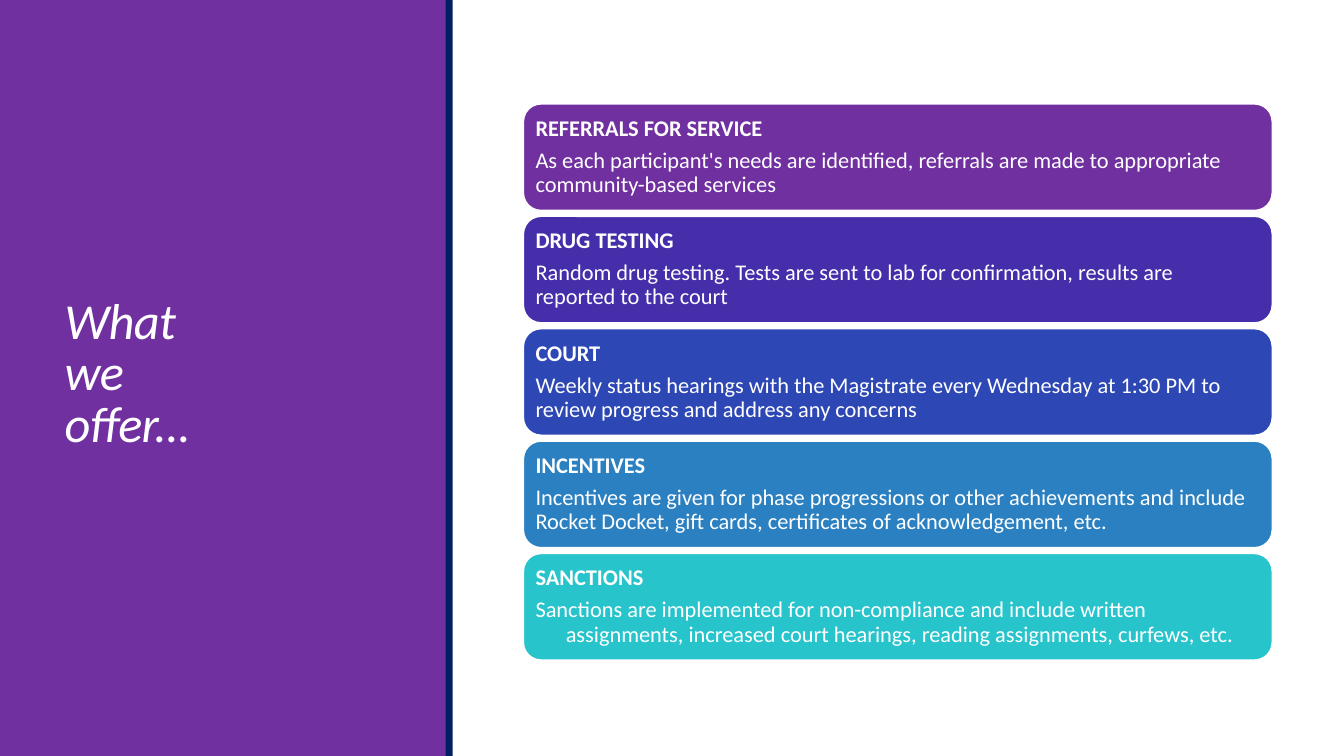
"""Build the "What we offer" slide: a purple title panel beside five service cards."""
from dataclasses import dataclass

from lxml import etree
from pptx import Presentation
from pptx import util as u
from pptx.dml.color import RGBColor
from pptx.enum import shapes, text
from pptx.oxml.ns import qn

SCALE = 9144
FONT = "Calibri"
WHITE, PURPLE, NAVY = "FFFFFF", "7030A0", "002060"
CARD_LEFT, CARD_TOP, CARD_WIDTH, CARD_HEIGHT = 519, 103, 743, 106
LAST_CARD_TOP = 549
CARD_INSET = 7
HANGING_INDENT = 30


@dataclass(frozen=True)
class Service:
    """One service on offer, with its card colour."""
    heading: str
    description: str
    color: str
    hanging: int = 0


SERVICES = [
    Service("REFERRALS FOR SERVICE",
            "As each participant's needs are identified, referrals are made to "
            "appropriate community-based services", PURPLE),
    Service("DRUG TESTING",
            "Random drug testing. Tests are sent to lab for confirmation, results are\v"
            "reported to the court", "462EAB"),
    Service("COURT",
            "Weekly status hearings with the Magistrate every Wednesday at 1:30 PM to "
            "review progress and address any concerns", "2D47B5"),
    Service("INCENTIVES",
            "Incentives are given for phase progressions or other achievements and include "
            "Rocket Docket, gift cards, certificates of acknowledgement, etc.", "2A80C1"),
    Service("SANCTIONS",
            "Sanctions are implemented for non-compliance and include written\v"
            "assignments, increased court hearings, reading assignments, curfews, etc.",
            "28C4CC", HANGING_INDENT),
]


def px(length: float) -> u.Emu:
    """Turn px into EMU."""
    return u.Emu(round(length * SCALE))


def rgb(color: str) -> RGBColor:
    """Turn a hex string into a colour."""
    return RGBColor.from_string(color)


def apply(target, formats: dict) -> None:
    """Set each attribute named in a dict of format values."""
    for name, value in formats.items():
        setattr(target, name, value)


def write(paragraph, words: str, size: int, spacing: float, **font) -> None:
    """Fill a paragraph with white, left-aligned text, sizing its line breaks alike."""
    paragraph.text = words
    apply(paragraph, {"alignment": text.PP_ALIGN.LEFT, "line_spacing": spacing})
    for run in paragraph.runs:
        apply(run.font, {"name": FONT, "size": u.Pt(size), **font})
        run.font.color.rgb = rgb(WHITE)
    for line_break in paragraph._p.findall(qn("a:br")):
        etree.SubElement(line_break, qn("a:rPr"), sz=str(size * 100))


def add_block(slide, kind, left: int, top: float, width: int, height: int, color: str):
    """Add a flat filled shape without an outline."""
    block = slide.shapes.add_shape(kind, px(left), px(top), px(width), px(height))
    block.shadow.inherit = False
    block.fill.solid()
    block.fill.fore_color.rgb = rgb(color)
    block.line.fill.background()
    return block


def add_card(slide, service: Service, top: float) -> None:
    """Add a rounded card with a bold heading over its description."""
    card = add_block(slide, shapes.MSO_SHAPE.ROUNDED_RECTANGLE,
                     CARD_LEFT, top, CARD_WIDTH, CARD_HEIGHT, service.color)
    card.line.color.rgb = rgb(WHITE)
    card.line.width = u.Pt(1.25)
    frame = card.text_frame
    sides = ("left", "top", "right", "bottom")
    apply(frame, {f"margin_{side}": px(CARD_INSET) for side in sides})
    apply(frame, {"word_wrap": True, "vertical_anchor": text.MSO_ANCHOR.MIDDLE})
    heading, description = frame.paragraphs[0], frame.add_paragraph()
    write(heading, service.heading, 16, 0.9, bold=True)
    heading.space_after = u.Pt(5.6)
    write(description, service.description, 16, 0.9, bold=False)
    if service.hanging:
        properties = description._p.get_or_add_pPr()
        properties.set("marL", str(px(service.hanging)))
        properties.set("indent", str(-px(service.hanging)))


def add_title(slide) -> None:
    """Place the title placeholder on the panel and format it."""
    title = slide.shapes.title
    slide.shapes._spTree.append(title._element)
    apply(title, {"left": px(54), "top": px(57), "width": px(337), "height": px(631)})
    apply(title.text_frame, {"word_wrap": True, "auto_size": text.MSO_AUTO_SIZE.NONE,
                             "vertical_anchor": text.MSO_ANCHOR.MIDDLE})
    paragraph = title.text_frame.paragraphs[0]
    write(paragraph, "What\vwe\voffer...", 36, 0.85, italic=True)
    for run in paragraph.runs:
        run.font._element.set("spc", "-50")


def main() -> None:
    """Build and save the slide."""
    deck = Presentation()
    apply(deck, {"slide_width": px(1333), "slide_height": px(750)})
    slide = deck.slides.add_slide(deck.slide_layouts[5])
    add_block(slide, shapes.MSO_SHAPE.RECTANGLE, 0, 0, 443, 750, PURPLE)
    add_title(slide)
    add_block(slide, shapes.MSO_SHAPE.RECTANGLE, 442, 0, 7, 750, NAVY)
    pitch = (LAST_CARD_TOP - CARD_TOP) / (len(SERVICES) - 1)
    for index, service in enumerate(SERVICES):
        add_card(slide, service, CARD_TOP + index * pitch)
    deck.save("out.pptx")


if __name__ == "__main__":
    main()
